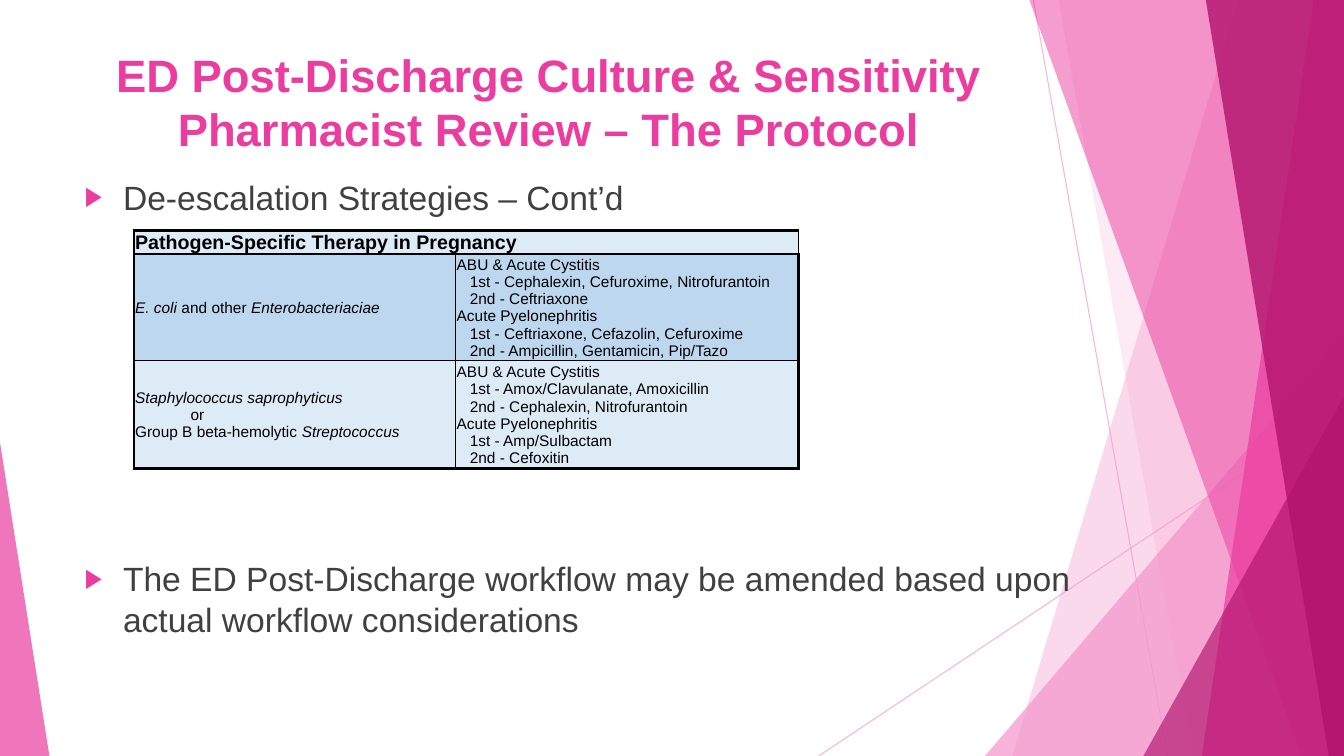
"""Build the protocol slide with its pathogen therapy table."""
from pptx import Presentation
from pptx.dml.color import RGBColor
from pptx.enum.shapes import MSO_CONNECTOR as CONN, MSO_SHAPE as SHAPE
from pptx.enum.text import MSO_ANCHOR as ANCHOR, MSO_AUTO_SIZE as FIT, PP_ALIGN as ALIGN
from pptx.oxml.ns import qn
from pptx.util import Inches, Pt
from lxml.etree import SubElement

W, H = 13.33, 7.5
LIGHT, PINK, DARK = "F496CB", "EB3D9F", "B2136D"
TITLE = "ED Post-Discharge Culture & Sensitivity Pharmacist Review – The Protocol"
BULLETS = [
    ("De-escalation Strategies – Cont’d", 0),
    ("The ED Post-Discharge workflow may be amended based upon actual workflow considerations", 244),
]
LINES = [((10.25, 0), (11.58, H)), ((W, 4.03), (8.12, H))]
BANDS = [
    ("band", 12.28, 10.04, LIGHT, 36),
    ("band", 10.5, 11.83, LIGHT, 20),
    ("triangle", (9.77, 3.33, 3.56, 4.17), 1, LIGHT, 72),
    ("band", 10.21, 12.91, PINK, 50),
    ("band", 13.03, 11.92, PINK, 70),
    ("band", 11.96, 13.18, DARK, 80),
    ("triangle", (11.34, 3.93, 1.99, 3.57), 1, DARK, 66),
    ("triangle", (0, 4.39, 0.49, 3.11), 0, PINK, 70),
]
HEADING = "Pathogen-Specific Therapy in Pregnancy"
STEP, OR_INDENT = 0.13, 0.55
PATHOGENS = [
    [(0, [("E. coli ", True), ("and other ", False), ("Enterobacteriaciae", True)])],
    [(0, [("Staphylococcus saprophyticus", True)]),
     (OR_INDENT, [("or", False)]),
     (0, [("Group B beta-hemolytic ", False), ("Streptococcus", True)])],
]
THERAPIES = [
    [("ABU & Acute Cystitis", "Cephalexin, Cefuroxime, Nitrofurantoin", "Ceftriaxone"),
     ("Acute Pyelonephritis", "Ceftriaxone, Cefazolin, Cefuroxime", "Ampicillin, Gentamicin, Pip/Tazo")],
    [("ABU & Acute Cystitis", "Amox/Clavulanate, Amoxicillin", "Cephalexin, Nitrofurantoin"),
     ("Acute Pyelonephritis", "Amp/Sulbactam", "Cefoxitin")],
]
COLS, ROWS = [3.19, 3.4], [0.23, 1.06, 1.07]
FILLS = ["DDEBF7", "BDD7EE", "DDEBF7"]
THICK, THIN = 2.25, 1


def rgb(hex_color):
    return RGBColor.from_string(hex_color)


def apply(target, values):
    for name, value in values.items():
        setattr(target, name, value)


def add_run(p, text, color, size, **extra):
    r = p.add_run()
    r.text = text
    apply(r.font, {"name": "Arial", "size": Pt(size), **extra})
    r.font.color.rgb = rgb(color)


def set_alpha(shape, percent):
    for color in shape._element.spPr.iter(qn("a:srgbClr")):
        SubElement(color, qn("a:alpha"), val=str(percent * 1000))


def add_decor(s):
    for start, end in LINES:
        line = s.shapes.add_connector(CONN.STRAIGHT, *map(Inches, start + end))
        line.line.color.rgb, line.line.width = rgb(LIGHT), Pt(0.75)
        set_alpha(line, 70)
        SubElement(line._element.spPr, qn("a:effectLst"))
    for kind, place, other, color, alpha in BANDS:
        if kind == "band":
            outline = s.shapes.build_freeform(Inches(place), 0)
            points = [(W, 0), (W, H), (other, H)]
            outline.add_line_segments([(Inches(x), Inches(y)) for x, y in points])
            shape = outline.convert_to_shape()
        else:
            shape = s.shapes.add_shape(SHAPE.ISOSCELES_TRIANGLE, *map(Inches, place))
            shape.adjustments[0] = other
        shape.shadow.inherit = False
        shape.fill.solid()
        shape.fill.fore_color.rgb = rgb(color)
        shape.line.fill.background()
        set_alpha(shape, alpha)


def place_holder(s, shape, box, anchor):
    s.shapes._spTree.append(shape._element)
    apply(shape, dict(zip(("left", "top", "width", "height"), map(Inches, box))))
    tf = shape.text_frame
    apply(tf, {"auto_size": FIT.NONE, "word_wrap": True, "vertical_anchor": anchor})
    return tf


def add_title(s):
    tf = place_holder(s, s.shapes.title, (0.74, 0.39, 9.4, 1.31), ANCHOR.MIDDLE)
    tf.margin_bottom = Inches(0.13)
    p = tf.paragraphs[0]
    p.alignment = ALIGN.CENTER
    add_run(p, TITLE, PINK, 32.4, bold=True)


def add_bullets(s):
    tf = place_holder(s, s.placeholders[1], (0.74, 1.7, 10.39, 5.53), ANCHOR.TOP)
    for i, (text, gap) in enumerate(BULLETS):
        p = tf.add_paragraph() if i else tf.paragraphs[0]
        p.space_before = Pt(gap)
        pPr = p._p.get_or_add_pPr()
        pPr.set("marL", str(Inches(0.38)))
        pPr.set("indent", str(-Inches(0.38)))
        SubElement(SubElement(pPr, qn("a:buClr")), qn("a:srgbClr"), val=PINK)
        SubElement(pPr, qn("a:buSzPct"), val="80000")
        SubElement(pPr, qn("a:buFont"), typeface="Arial")
        SubElement(pPr, qn("a:buChar"), char="▶")
        add_run(p, text, "404040", 24)


def therapy_lines(groups):
    lines = []
    for name, first, second in groups:
        lines += [(0, [(name, False)]), (STEP, [("1st - " + first, False)]),
                  (STEP, [("2nd - " + second, False)])]
    return lines


def set_borders(cell, row, col):
    tcPr = cell._tc.get_or_add_tcPr()
    outer = {"L": col == 0, "R": col == len(COLS) - 1, "T": row == 0, "B": row == len(ROWS) - 1}
    for side, thick in outer.items():
        ln = SubElement(tcPr, qn("a:ln" + side), w=str(Pt(THICK if thick else THIN)))
        SubElement(SubElement(ln, qn("a:solidFill")), qn("a:srgbClr"), val="000000")


def add_table(s):
    frame = s.shapes.add_table(len(ROWS), len(COLS), Inches(1.33), Inches(2.29),
                               Inches(sum(COLS)), Inches(sum(ROWS)))
    table = frame.table
    for col, width in zip(table.columns, COLS):
        col.width = Inches(width)
    for row, height in zip(table.rows, ROWS):
        row.height = Inches(height)
    table.cell(0, 0).merge(table.cell(0, 1))
    content = [[[(0, [(HEADING, False)])], []]]
    content += [[left, therapy_lines(right)] for left, right in zip(PATHOGENS, THERAPIES)]
    for i, row in enumerate(content):
        for j, lines in enumerate(row):
            cell = table.cell(i, j)
            set_borders(cell, i, j)
            cell.fill.solid()
            cell.fill.fore_color.rgb = rgb(FILLS[i])
            edge = Inches(0.01)
            apply(cell, {"margin_left": edge, "margin_right": edge, "margin_top": edge,
                         "margin_bottom": 0, "vertical_anchor": ANCHOR.MIDDLE})
            for k, (indent, runs) in enumerate(lines):
                tf = cell.text_frame
                p = tf.add_paragraph() if k else tf.paragraphs[0]
                p._p.get_or_add_pPr().set("marL", str(Inches(indent)))
                for text, italic in runs:
                    add_run(p, text, "000000", 11 if i else 14, bold=i == 0, italic=italic)


def main():
    prs = Presentation()
    prs.slide_width, prs.slide_height = Inches(W), Inches(H)
    s = prs.slides.add_slide(prs.slide_layouts[1])
    add_decor(s)
    add_title(s)
    add_bullets(s)
    add_table(s)
    prs.save("out.pptx")


if __name__ == "__main__":
    main()
